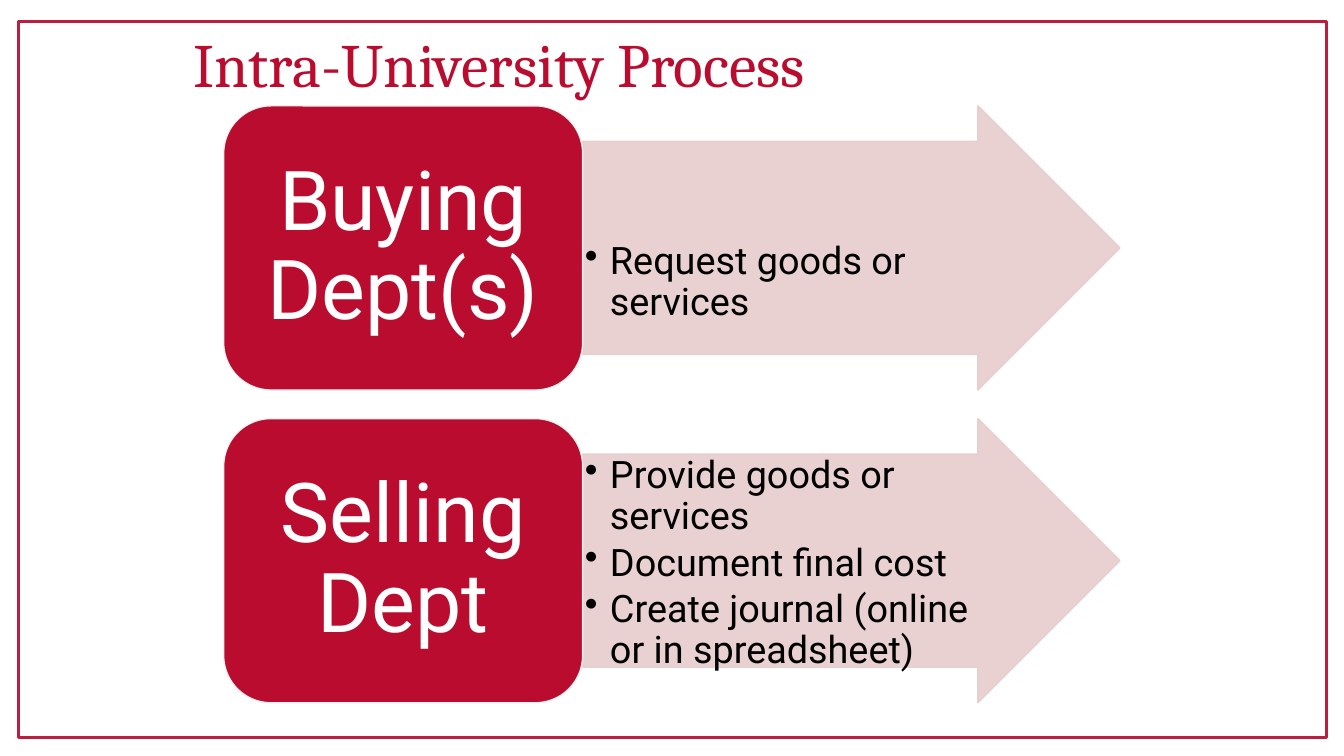
from dataclasses import dataclass

from lxml.etree import SubElement
from pptx import Presentation
from pptx.dml.color import RGBColor
from pptx.enum.shapes import MSO_SHAPE
from pptx.enum.text import MSO_ANCHOR, PP_ALIGN
from pptx.oxml.ns import qn
from pptx.shapes.autoshape import Shape
from pptx.slide import Slide
from pptx.text.text import TextFrame
from pptx.util import Pt

CRIMSON = RGBColor(0xBA, 0x0C, 0x2F)
FRAME_RED = RGBColor(0xBC, 0x1E, 0x3E)
PINK = RGBColor(0xE7, 0xCC, 0xCD)
PALE_GRAY = RGBColor(0xF2, 0xF2, 0xF2)
WHITE = RGBColor(0xFF, 0xFF, 0xFF)
BLACK = RGBColor(0, 0, 0)

LABEL_LEFT = 159.8
LABEL_WIDTH = 256.4
ARROW_LEFT = LABEL_LEFT + LABEL_WIDTH
ARROW_WIDTH = 383.8
ROW_TOP = 75.6
ROW_HEIGHT = 203
ROW_PITCH = 223.4


@dataclass(frozen=True)
class Department:
    name: str
    steps: tuple[str, ...]
    steps_top_inset: float


DEPARTMENTS = (
    Department("Buying Dept(s)", ("Request goods or services",), 72),
    Department(
        "Selling Dept",
        (
            "Provide goods or services",
            "Document final cost",
            "Create journal (online or in spreadsheet)",
        ),
        1.5,
    ),
)


def add_outlined_shape(
    slide: Slide, kind: MSO_SHAPE, left: float, top: float, width: float,
    height: float, line_color: RGBColor, line_width: float,
) -> Shape:
    shape = slide.shapes.add_shape(kind, Pt(left), Pt(top), Pt(width), Pt(height))
    shape.shadow.inherit = False
    shape.line.color.rgb = line_color
    shape.line.width = Pt(line_width)
    return shape


def set_insets(
    text_frame: TextFrame, left: float, top: float, right: float, bottom: float
) -> None:
    text_frame.word_wrap = True
    text_frame.margin_left = Pt(left)
    text_frame.margin_top = Pt(top)
    text_frame.margin_right = Pt(right)
    text_frame.margin_bottom = Pt(bottom)


def format_text(
    text_frame: TextFrame, font_name: str, size: float, color: RGBColor,
    alignment: PP_ALIGN,
) -> None:
    for paragraph in text_frame.paragraphs:
        paragraph.alignment = alignment
        paragraph.line_spacing = 0.9
        for run in paragraph.runs:
            run.font.name = font_name
            run.font.size = Pt(size)
            run.font.color.rgb = color


def add_frame(slide: Slide) -> None:
    frame = add_outlined_shape(
        slide, MSO_SHAPE.RECTANGLE, 13, 15.1, 934.6, 511.9, FRAME_RED, 2
    )
    frame.fill.background()


def add_title(slide: Slide) -> None:
    title = slide.shapes.add_textbox(Pt(131), Pt(15.1), Pt(807.8), Pt(67))
    text_frame = title.text_frame
    text_frame.word_wrap = True
    text_frame.vertical_anchor = MSO_ANCHOR.MIDDLE
    text_frame.text = "Intra-University Process"
    format_text(text_frame, "Cambria", 44, CRIMSON, PP_ALIGN.LEFT)


def add_steps_arrow(slide: Slide, department: Department, top: float) -> None:
    arrow = add_outlined_shape(
        slide, MSO_SHAPE.RIGHT_ARROW, ARROW_LEFT, top, ARROW_WIDTH, ROW_HEIGHT, PINK, 1
    )
    arrow.adjustments[0] = 0.75
    arrow.adjustments[1] = 0.5
    arrow.fill.solid()
    arrow.fill.fore_color.rgb = PINK
    for color in arrow.element.spPr.iter(qn("a:srgbClr")):
        SubElement(color, qn("a:alpha"), val="90000")
    text_frame = arrow.text_frame
    text_frame.vertical_anchor = MSO_ANCHOR.TOP
    set_insets(text_frame, 1.5, department.steps_top_inset, 1.5, 1.5)
    text_frame.text = "\n".join(department.steps)
    for paragraph in text_frame.paragraphs:
        paragraph.level = 1
        properties = paragraph._p.get_or_add_pPr()
        properties.set("marL", str(Pt(18)))
        properties.set("indent", str(Pt(-18)))
        SubElement(properties, qn("a:buChar"), char="•")
        paragraph.space_after = Pt(4)
    format_text(text_frame, "Roboto", 27, BLACK, PP_ALIGN.LEFT)


def add_label(slide: Slide, department: Department, top: float) -> None:
    label = add_outlined_shape(
        slide, MSO_SHAPE.ROUNDED_RECTANGLE, LABEL_LEFT, top, LABEL_WIDTH, ROW_HEIGHT,
        PALE_GRAY, 1,
    )
    label.fill.solid()
    label.fill.fore_color.rgb = CRIMSON
    text_frame = label.text_frame
    text_frame.vertical_anchor = MSO_ANCHOR.MIDDLE
    set_insets(text_frame, 18, 9, 18, 9)
    text_frame.text = department.name
    format_text(text_frame, "Roboto", 59, WHITE, PP_ALIGN.CENTER)


def main() -> None:
    presentation = Presentation()
    presentation.slide_width = Pt(960)
    presentation.slide_height = Pt(540)
    slide = presentation.slides.add_slide(presentation.slide_layouts[6])
    add_frame(slide)
    add_title(slide)
    for index, department in enumerate(DEPARTMENTS):
        top = ROW_TOP + index * ROW_PITCH
        add_steps_arrow(slide, department, top)
        add_label(slide, department, top)
    presentation.save("out.pptx")


if __name__ == "__main__":
    main()
